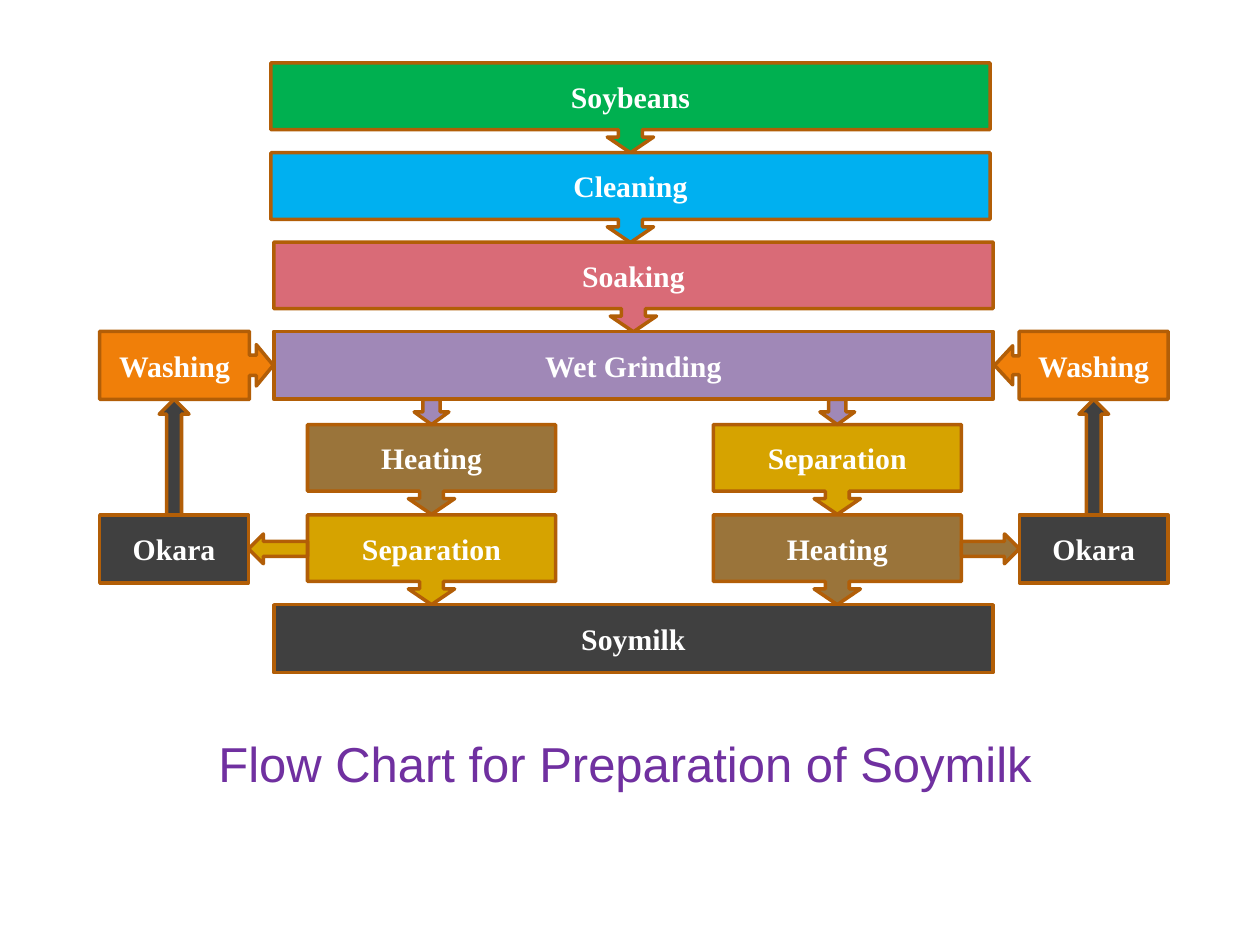
"""Build the soymilk preparation flow chart slide."""
import pptx
import pptx.dml.color
import pptx.enum.shapes
import pptx.enum.text
import pptx.util

Cm, Pt = pptx.util.Cm, pptx.util.Pt
SHAPE = pptx.enum.shapes.MSO_SHAPE

TITLE = "Flow Chart for Preparation of Soymilk"
GREEN, BLUE, ROSE, PURPLE = "00B050", "00B0F0", "D96B77", "A088B7"
BROWN, GOLD, ORANGE, GREY = "9A743A", "D6A300", "F07F09", "404040"
BORDER, WHITE, VIOLET = "B25E07", "FFFFFF", "7030A0"

ROW_TOPS = [1.27, 3.08, 4.88, 6.68, 8.56, 10.38, 12.19]
STEP_HEIGHT, BOX_HEIGHT = 1.81, 1.37
WIDE, BRANCH, SIDE, WASH = 14.5, 5, 3, 3.5
MAIN_LEFT, BRANCH_LEFTS, SIDE_LEFTS = 5.52, (6.2, 14.38), (2.01, 20.55)
WASH_LEFTS = (SIDE_LEFTS[0], SIDE_LEFTS[1] + SIDE - WASH)

DOWN = (SHAPE.DOWN_ARROW_CALLOUT, (0.267, 0.258, 0.175, 0.742))
RIGHT = (SHAPE.RIGHT_ARROW_CALLOUT, (0.296, 0.305, 0.25, 0.863))
LEFT = (SHAPE.LEFT_ARROW_CALLOUT, (0.278, 0.287, 0.267, 0.858))
BOX = (SHAPE.RECTANGLE, ())

STEPS = [
    ("Soybeans", DOWN, GREEN, 0, 5.46, WIDE),
    ("Cleaning", DOWN, BLUE, 1, 5.46, WIDE),
    ("Soaking", DOWN, ROSE, 2, MAIN_LEFT, WIDE),
    ("Heating", DOWN, BROWN, 4, BRANCH_LEFTS[0], BRANCH),
    ("Separation", DOWN, GOLD, 5, BRANCH_LEFTS[0], BRANCH),
    ("Separation", DOWN, GOLD, 4, BRANCH_LEFTS[1], BRANCH),
    ("Heating", DOWN, BROWN, 5, BRANCH_LEFTS[1], BRANCH),
    ("Washing", RIGHT, ORANGE, 3, WASH_LEFTS[0], WASH),
    ("Washing", LEFT, ORANGE, 3, WASH_LEFTS[1], WASH),
    ("Soymilk", BOX, GREY, 6, MAIN_LEFT, WIDE),
    ("Okara", BOX, GREY, 5, SIDE_LEFTS[0], SIDE),
    ("Okara", BOX, GREY, 5, SIDE_LEFTS[1], SIDE),
    ("Wet Grinding", BOX, PURPLE, 3, MAIN_LEFT, WIDE),
]


def rgb(value):
    return pptx.dml.color.RGBColor.from_string(value)


def add_block(slide, kind, color, left, top, width, height):
    block = slide.shapes.add_shape(kind, Cm(left), Cm(top), Cm(width), Cm(height))
    block.shadow.inherit = False
    block.fill.solid()
    block.fill.fore_color.rgb = rgb(color)
    block.line.color.rgb = rgb(BORDER)
    block.line.width = Pt(2)
    return block


def write(shape, text, font_name, size, color, bold, anchor):
    frame = shape.text_frame
    frame.text = text
    frame.word_wrap = True
    frame.vertical_anchor = anchor
    frame.margin_left = frame.margin_right = Cm(0.05)
    frame.margin_top = frame.margin_bottom = Cm(0.03)
    paragraph = frame.paragraphs[0]
    paragraph.alignment = pptx.enum.text.PP_ALIGN.CENTER
    font = paragraph.font
    font.name, font.size, font.bold = font_name, Pt(size), bold
    font.color.rgb = rgb(color)


def add_step(slide, text, callout, color, row, left, width):
    kind, adjustments = callout
    height = STEP_HEIGHT if callout is DOWN else BOX_HEIGHT
    step = add_block(slide, kind, color, left, ROW_TOPS[row], width, height)
    for index, value in enumerate(adjustments):
        step.adjustments[index] = value
    write(step, text, "Times New Roman", 17, WHITE, True, pptx.enum.text.MSO_ANCHOR.MIDDLE)


def add_arrows(slide):
    grinding_bottom = ROW_TOPS[3] + BOX_HEIGHT
    for left in BRANCH_LEFTS:
        add_block(slide, SHAPE.DOWN_ARROW, PURPLE, left + BRANCH / 2 - 0.35,
                  grinding_bottom, 0.7, ROW_TOPS[4] - grinding_bottom)
    for left in SIDE_LEFTS:
        add_block(slide, SHAPE.UP_ARROW, GREY, left + SIDE / 2 - 0.3,
                  grinding_bottom, 0.6, ROW_TOPS[5] - grinding_bottom)
    okara_edge, branch_edge = SIDE_LEFTS[0] + SIDE, BRANCH_LEFTS[1] + BRANCH
    side_top = ROW_TOPS[5] + BOX_HEIGHT / 2 - 0.3
    add_block(slide, SHAPE.LEFT_ARROW, GOLD, okara_edge, side_top,
              BRANCH_LEFTS[0] - okara_edge, 0.6)
    add_block(slide, SHAPE.RIGHT_ARROW, BROWN, branch_edge, side_top,
              SIDE_LEFTS[1] - branch_edge, 0.6)


def main():
    deck = pptx.Presentation()
    deck.slide_width, deck.slide_height = Cm(25.4), Cm(19.05)
    slide = deck.slides.add_slide(deck.slide_layouts[5])
    for step in STEPS:
        add_step(slide, *step)
    add_arrows(slide)
    title = slide.shapes.title
    title.left, title.top, title.width, title.height = Cm(0.25), Cm(14.76), Cm(24.7), Cm(1.24)
    write(title, TITLE, "Arial", 28, VIOLET, False, pptx.enum.text.MSO_ANCHOR.TOP)
    title.text_frame.auto_size = pptx.enum.text.MSO_AUTO_SIZE.SHAPE_TO_FIT_TEXT
    deck.save("out.pptx")


if __name__ == "__main__":
    main()
